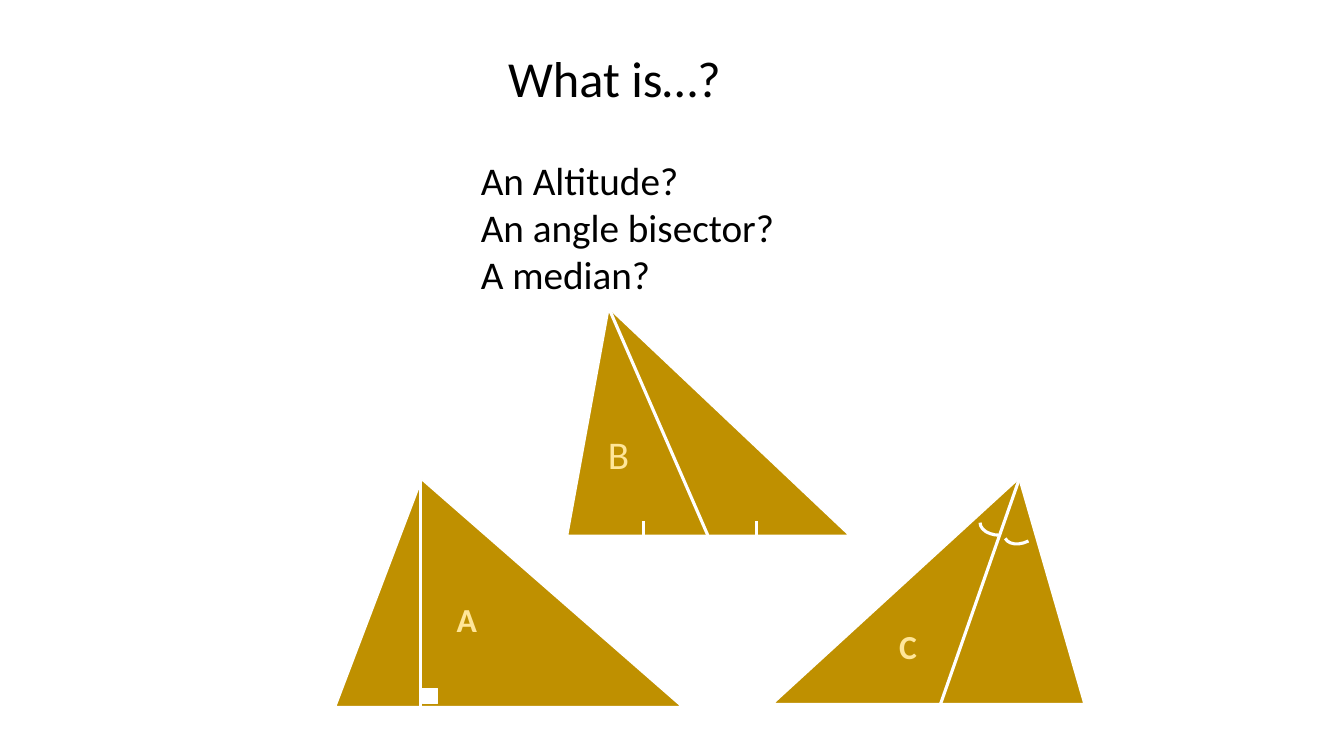
"""Builds a slide asking for the altitude, angle bisector and median of a triangle."""
from dataclasses import dataclass

from lxml import etree
from pptx import Presentation
from pptx import util as u
from pptx.dml.color import RGBColor
from pptx.enum import shapes, text
from pptx.oxml.ns import qn
from pptx.shapes.autoshape import Shape
from pptx.slide import Slide


@dataclass(frozen=True)
class Theme:
    font: str = "Calibri"
    ink: RGBColor = RGBColor(0x00, 0x00, 0x00)
    gold: RGBColor = RGBColor(0xBF, 0x90, 0x00)
    cream: RGBColor = RGBColor(0xFF, 0xE6, 0x99)
    white: RGBColor = RGBColor(0xFF, 0xFF, 0xFF)
    title_size: float = 36
    body_size: float = 28
    label_size: float = 24
    outline: float = 1
    stroke: float = 2.25


@dataclass(frozen=True)
class Frame:
    left: float
    top: float
    width: float
    height: float

    def lengths(self) -> tuple[u.Length, ...]:
        return tuple(u.Inches(n) for n in (self.left, self.top, self.width, self.height))


@dataclass(frozen=True)
class Triangle:
    frame: Frame
    apex: float


@dataclass(frozen=True)
class Segment:
    x1: float
    y1: float
    x2: float
    y2: float


@dataclass(frozen=True)
class Arc:
    frame: Frame
    rotation: float


@dataclass(frozen=True)
class Label:
    letter: str
    frame: Frame
    size: float
    bold: bool


THEME = Theme()
QUESTIONS = ["An Altitude?", "An angle bisector?", "A median?"]
TRIANGLES = [
    Triangle(Frame(3.33, 4.76, 3.43, 2.25), 0.249),
    Triangle(Frame(5.63, 3.06, 2.79, 2.25), 0.147),
    Triangle(Frame(7.67, 4.75, 3.08, 2.23), 0.791),
]
RIGHT_ANGLE = Frame(4.19, 6.83, 0.15, 0.15)
ALTITUDE = Segment(4.17, 4.76, 4.17, 7.01)
MEDIAN = Segment(6.04, 3.06, 7.02, 5.31)
BISECTOR = Segment(10.11, 4.75, 9.33, 6.98)
TICKS = [Segment(x, 5.17, x, 5.42) for x in (6.38, 7.5)]
ARCS = [Arc(Frame(9.72, 5.06, 0.39, 0.25), 180), Arc(Frame(9.95, 5.13, 0.39, 0.25), 153.8)]
LABELS = [
    Label("A", Frame(4.43, 5.89, 0.67, 0.5), THEME.label_size, True),
    Label("B", Frame(5.93, 4.22, 0.75, 0.57), THEME.body_size, False),
    Label("C", Frame(8.82, 6.16, 0.58, 0.5), THEME.label_size, True),
]


def write(box: Shape, lines: list[str], size: float, color: RGBColor, bold: bool = False) -> None:
    frame = box.text_frame
    frame.text = "\n".join(lines)
    frame.word_wrap = True
    frame.auto_size = text.MSO_AUTO_SIZE.SHAPE_TO_FIT_TEXT
    frame.vertical_anchor = text.MSO_ANCHOR.TOP
    for para in frame.paragraphs:
        para.alignment = text.PP_ALIGN.LEFT
        para.font.name = THEME.font
        para.font.size = u.Pt(size)
        para.font.bold = bold
        para.font.color.rgb = color


def add_title(page: Slide, words: str, frame: Frame) -> None:
    title = page.shapes.title
    title.left, title.top, title.width, title.height = frame.lengths()
    write(title, [words], THEME.title_size, THEME.ink)


def add_figure(page: Slide, kind: shapes.MSO_SHAPE, frame: Frame, fill: RGBColor | None,
               width: float = THEME.outline) -> Shape:
    figure = page.shapes.add_shape(kind, *frame.lengths())
    figure.shadow.inherit = False
    if fill is None:
        figure.fill.background()
    else:
        figure.fill.solid()
        figure.fill.fore_color.rgb = fill
    figure.line.color.rgb = THEME.white
    figure.line.width = u.Pt(width)
    return figure


def add_triangle(page: Slide, triangle: Triangle) -> None:
    figure = add_figure(page, shapes.MSO_SHAPE.ISOSCELES_TRIANGLE, triangle.frame, THEME.gold)
    figure.adjustments[0] = triangle.apex


def add_segment(page: Slide, segment: Segment) -> None:
    ends = (u.Inches(n) for n in (segment.x1, segment.y1, segment.x2, segment.y2))
    line = page.shapes.add_connector(shapes.MSO_CONNECTOR.STRAIGHT, *ends)
    line.line.color.rgb = THEME.white
    line.line.width = u.Pt(THEME.stroke)
    etree.SubElement(line._element.spPr, qn("a:effectLst"))


def add_arc(page: Slide, arc: Arc) -> None:
    figure = add_figure(page, shapes.MSO_SHAPE.ARC, arc.frame, None, THEME.stroke)
    figure.rotation = arc.rotation


def add_text(page: Slide, lines: list[str], frame: Frame, size: float, color: RGBColor,
             bold: bool = False) -> None:
    write(page.shapes.add_textbox(*frame.lengths()), lines, size, color, bold)


def main() -> None:
    deck = Presentation()
    deck.slide_width, deck.slide_height = u.Inches(13.33), u.Inches(7.5)
    page = deck.slides.add_slide(deck.slide_layouts.get_by_name("Title Only"))
    add_title(page, "What is…?", Frame(4.94, 0.42, 4, 0.71))
    add_text(page, QUESTIONS, Frame(4.67, 1.5, 3.42, 1.51), THEME.body_size, THEME.ink)
    for triangle in TRIANGLES:
        add_triangle(page, triangle)
    add_segment(page, ALTITUDE)
    add_figure(page, shapes.MSO_SHAPE.RECTANGLE, RIGHT_ANGLE, THEME.white)
    for segment in (MEDIAN, *TICKS, BISECTOR):
        add_segment(page, segment)
    for arc in ARCS:
        add_arc(page, arc)
    for label in LABELS:
        add_text(page, [label.letter], label.frame, label.size, THEME.cream, label.bold)
    deck.save("out.pptx")


if __name__ == "__main__":
    main()
